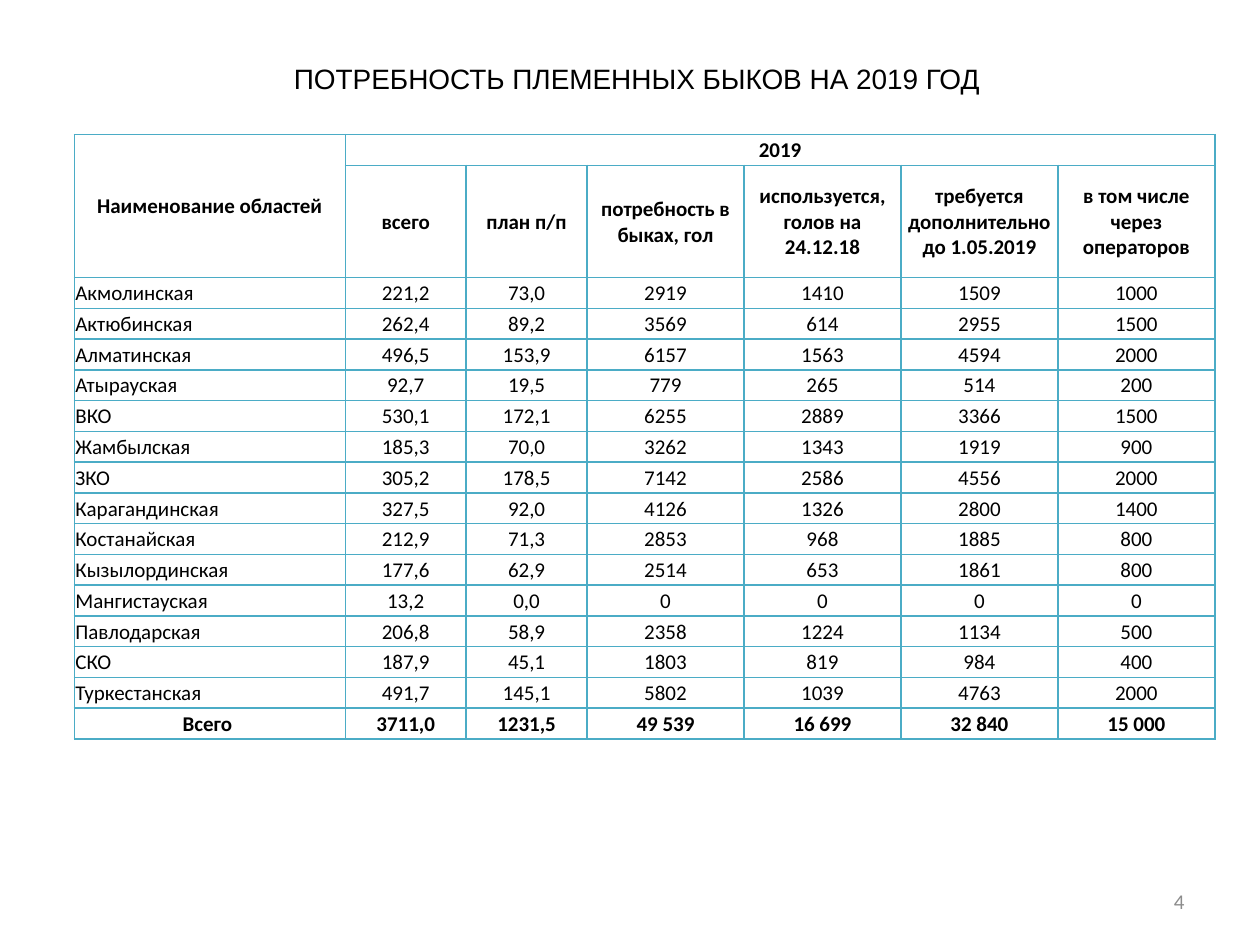
"""Build a slide with a table of breeding bull demand by region for 2019."""
from lxml import etree
from pptx import Presentation
from pptx.dml.color import RGBColor
from pptx.enum import text as t
from pptx.oxml import ns
from pptx.util import Pt

BLACK = RGBColor(0, 0, 0)
GREY = RGBColor(0x8C, 0x8C, 0x8C)
TEAL = RGBColor(0x4B, 0xAC, 0xC6)
LEFT, MID, RIGHT = t.PP_ALIGN.LEFT, t.PP_ALIGN.CENTER, t.PP_ALIGN.RIGHT

TITLE = "ПОТРЕБНОСТЬ ПЛЕМЕННЫХ БЫКОВ НА 2019 ГОД"
PAGE = "4"
HEAD = [
    ("Наименование областей", "2019", "", "", "", "", ""),
    ("", "всего", "план п/п", "потребность в быках, гол",
     "используется, голов на 24.12.18",
     "требуется дополнительно до 1.05.2019",
     "в том числе через операторов"),
]
BODY = [
    ("Акмолинская", "221,2", "73,0", "2919", "1410", "1509", "1000"),
    ("Актюбинская", "262,4", "89,2", "3569", "614", "2955", "1500"),
    ("Алматинская", "496,5", "153,9", "6157", "1563", "4594", "2000"),
    ("Атырауская", "92,7", "19,5", "779", "265", "514", "200"),
    ("ВКО", "530,1", "172,1", "6255", "2889", "3366", "1500"),
    ("Жамбылская", "185,3", "70,0", "3262", "1343", "1919", "900"),
    ("ЗКО", "305,2", "178,5", "7142", "2586", "4556", "2000"),
    ("Карагандинская", "327,5", "92,0", "4126", "1326", "2800", "1400"),
    ("Костанайская", "212,9", "71,3", "2853", "968", "1885", "800"),
    ("Кызылординская", "177,6", "62,9", "2514", "653", "1861", "800"),
    ("Мангистауская", "13,2", "0,0", "0", "0", "0", "0"),
    ("Павлодарская", "206,8", "58,9", "2358", "1224", "1134", "500"),
    ("СКО", "187,9", "45,1", "1803", "819", "984", "400"),
    ("Туркестанская", "491,7", "145,1", "5802", "1039", "4763", "2000"),
]
TOTAL = ("Всего ", "3711,0", "1231,5", "49 539", "16 699", "32 840", "15 000")
ROWS = HEAD + BODY + [TOTAL]
COLS = [154.8] + [69.1] * 2 + [89.7] * 4
HIGH = [17.6, 64.1] + [17.6] * (len(BODY) + 1)


def write(frame, words, size=12, font="Calibri", color=BLACK, bold=False,
          align=MID, space=None):
    para = frame.paragraphs[0]
    para.alignment = align
    para.line_spacing = space
    run = para.add_run()
    run.text = words
    run.font.size = Pt(size)
    run.font.name = font
    run.font.bold = bold
    run.font.color.rgb = color


def label(slide, box, words, **style):
    frame = slide.shapes.add_textbox(*map(Pt, box)).text_frame
    frame.word_wrap = True
    frame.vertical_anchor = t.MSO_ANCHOR.MIDDLE
    write(frame, words, **style)


def border(cell):
    props = cell._tc.get_or_add_tcPr()
    for spot, side in enumerate(("lnL", "lnR", "lnT", "lnB")):
        line = etree.Element(ns.qn("a:" + side), w=str(Pt(1)))
        fill = etree.SubElement(line, ns.qn("a:solidFill"))
        etree.SubElement(fill, ns.qn("a:srgbClr"), val=str(TEAL))
        props.insert(spot, line)


def grid(slide):
    box = map(Pt, (42.5, 77, sum(COLS), sum(HIGH)))
    table = slide.shapes.add_table(len(ROWS), len(COLS), *box).table
    for col, width in zip(table.columns, COLS):
        col.width = Pt(width)
    for row, height in zip(table.rows, HIGH):
        row.height = Pt(height)
    table.cell(0, 0).merge(table.cell(1, 0))
    table.cell(0, 1).merge(table.cell(0, len(COLS) - 1))
    for r, row in enumerate(ROWS):
        body = row in BODY
        for c, words in enumerate(row):
            cell = table.cell(r, c)
            cell.fill.background()
            border(cell)
            cell.margin_left = cell.margin_right = cell.margin_top = Pt(0.6)
            cell.margin_bottom = Pt(0)
            cell.vertical_anchor = t.MSO_ANCHOR.MIDDLE
            if words:
                write(cell.text_frame, words, bold=not body,
                      align=LEFT if body and c == 0 else MID)


def main():
    deck = Presentation()
    deck.slide_width, deck.slide_height = Pt(720), Pt(540)
    slide = deck.slides.add_slide(deck.slide_layouts[6])
    grid(slide)
    label(slide, (21, 21, 686, 50), TITLE, size=16, font="Arial", space=0.9)
    label(slide, (516, 500.5, 168, 28.8), PAGE, color=GREY, align=RIGHT)
    deck.save("out.pptx")


if __name__ == "__main__":
    main()
